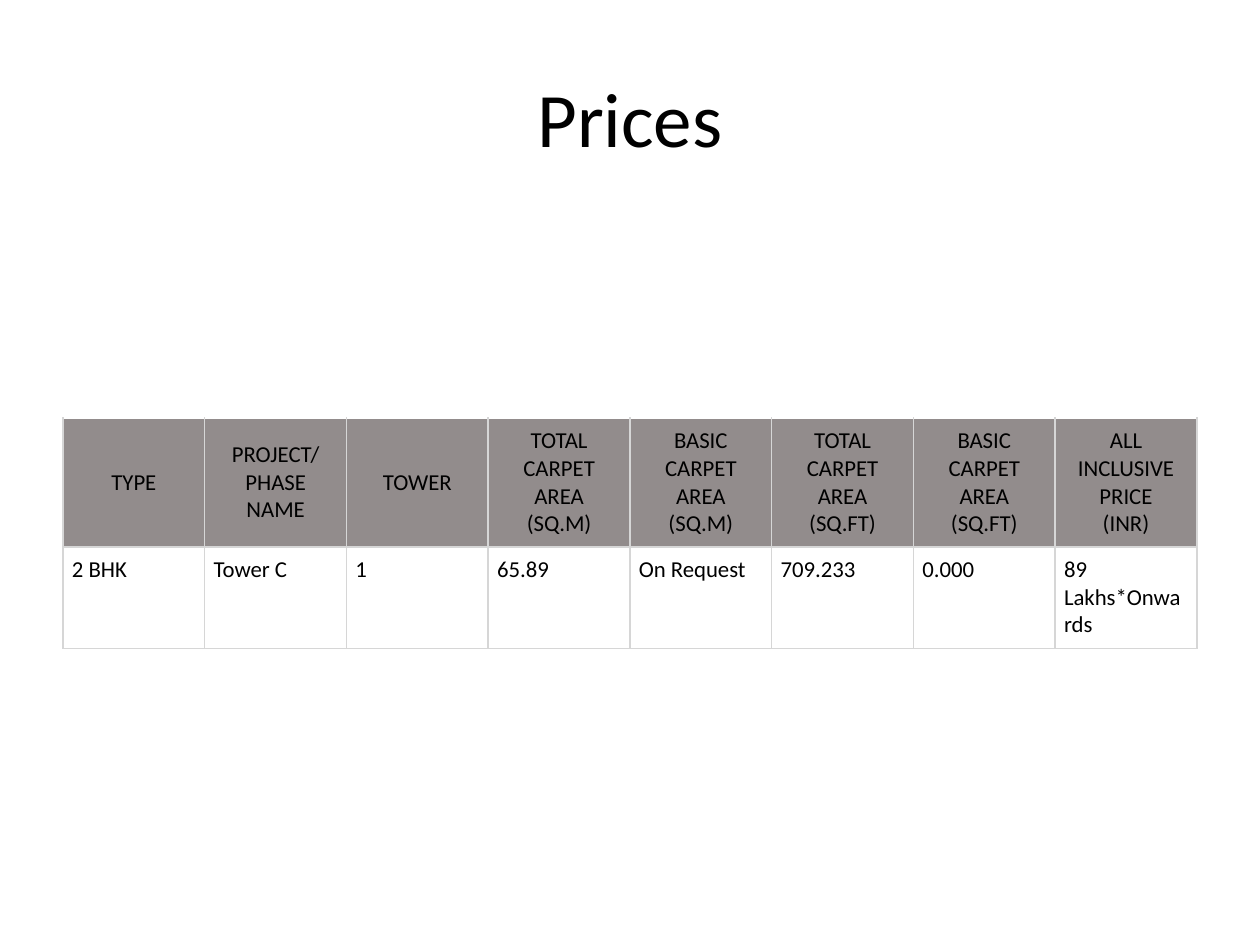
import pptx
import pptx.dml.color
import pptx.enum.text
import pptx.oxml
import pptx.oxml.ns
import pptx.util

TITLE = "Prices"
HEADINGS = [
    "TYPE",
    "PROJECT/PHASE NAME",
    "TOWER",
    "TOTAL CARPET AREA\v(SQ.M)",
    "BASIC CARPET AREA\v(SQ.M)",
    "TOTAL CARPET AREA\v(SQ.FT)",
    "BASIC CARPET AREA\v(SQ.FT)",
    "ALL INCLUSIVE PRICE\v(INR)",
]
OFFER = ["2 BHK", "Tower C", "1", "65.89", "On Request", "709.233", "0.000", "89 Lakhs*Onwards"]

FONT = "Calibri"
BLACK, GREY, RULE = "000000", "928C8C", "D6D6D6"
SLIDE_BOX = (1260, 945)
TITLE_BOX = (63, 38, 1134, 157)
TABLE_BOX = (63, 418, 1134, 230)
ROW_HEIGHTS = (128, 102)
CELL_MARGIN = 9
HEADER_BORDERS = {"L": 1, "R": 1, "B": 1}
OFFER_BORDERS = {"L": 1, "R": 1, "T": 1, "B": 0.75}


def px(length):
    return pptx.util.Emu(length * 914400 // 126)


def colour(value):
    return pptx.dml.color.RGBColor.from_string(value)


def write(frame, text, size, align):
    frame.text = text
    paragraph = frame.paragraphs[0]
    paragraph.alignment = align
    for run in paragraph.runs:
        run.font.name = FONT
        run.font.size = pptx.util.Pt(size)
        run.font.color.rgb = colour(BLACK)


def set_borders(cell, widths):
    properties = cell._tc.get_or_add_tcPr()
    sides = [side for side in "LRTB" if side in widths]
    for position, side in enumerate(sides):
        border = pptx.oxml.parse_xml(
            f'<a:ln{side} {pptx.oxml.ns.nsdecls("a")} w="{int(widths[side] * 12700)}">'
            f'<a:solidFill><a:srgbClr val="{RULE}"/></a:solidFill></a:ln{side}>'
        )
        properties.insert(position, border)


def add_prices(slide):
    rows = [HEADINGS, OFFER]
    prices = slide.shapes.add_table(len(rows), len(HEADINGS), *map(px, TABLE_BOX)).table
    prices.first_row = False
    prices.horz_banding = False
    for row_index, texts in enumerate(rows):
        prices.rows[row_index].height = px(ROW_HEIGHTS[row_index])
        is_header = row_index == 0
        for column_index, text in enumerate(texts):
            cell = prices.cell(row_index, column_index)
            cell.margin_left = cell.margin_right = px(CELL_MARGIN)
            cell.margin_top = cell.margin_bottom = px(CELL_MARGIN)
            if is_header:
                cell.vertical_anchor = pptx.enum.text.MSO_ANCHOR.MIDDLE
                cell.fill.solid()
                cell.fill.fore_color.rgb = colour(GREY)
            else:
                cell.fill.background()
            align = pptx.enum.text.PP_ALIGN.CENTER if is_header else pptx.enum.text.PP_ALIGN.LEFT
            write(cell.text_frame, text, 13, align)
            set_borders(cell, HEADER_BORDERS if is_header else OFFER_BORDERS)


def main():
    deck = pptx.Presentation()
    deck.slide_width, deck.slide_height = map(px, SLIDE_BOX)
    slide = deck.slides.add_slide(deck.slide_layouts[5])
    title = slide.shapes.title
    title.left, title.top, title.width, title.height = map(px, TITLE_BOX)
    title.text_frame.vertical_anchor = pptx.enum.text.MSO_ANCHOR.MIDDLE
    write(title.text_frame, TITLE, 44, pptx.enum.text.PP_ALIGN.CENTER)
    add_prices(slide)
    deck.save("out.pptx")


if __name__ == "__main__":
    main()
